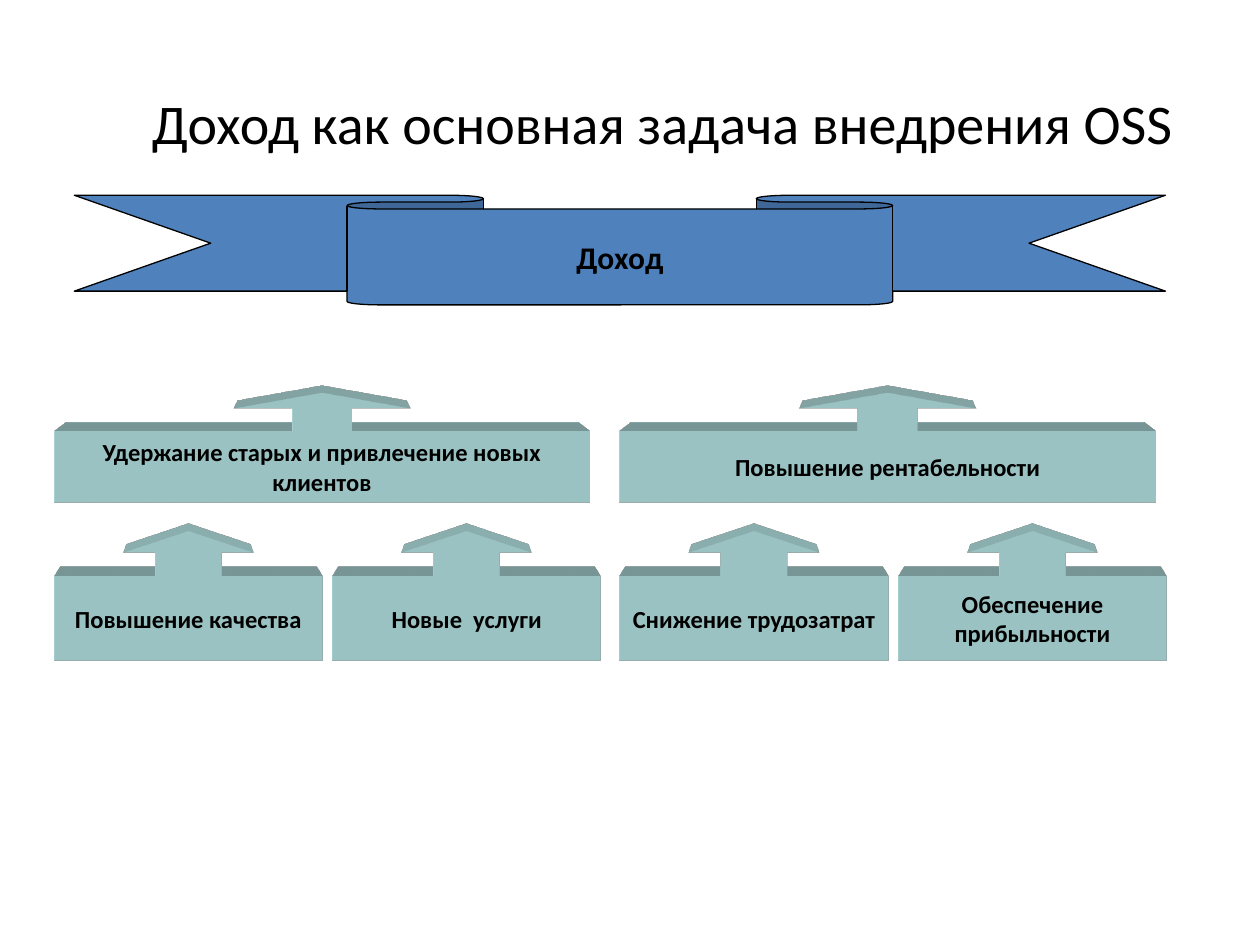
from lxml import etree
from pptx import Presentation
from pptx.dml.color import RGBColor
from pptx.enum import shapes, text
from pptx.oxml import ns
from pptx.util import Inches, Pt

COLORS = {"text": "000000", "ribbon": "4F81BD", "callout": "CCFFFF"}
FONT = "Calibri"

GROUP_LEFTS = (0.43, 4.92)
PART_STEP = 2.21
GROUPS = [
    ("Удержание старых и привлечение новых клиентов",
     ("Повышение качества", "Новые  услуги")),
    ("Повышение рентабельности",
     ("Снижение трудозатрат", "Обеспечение прибыльности")),
]
GOAL = {"top": 3.12, "size": (4.25, 0.87), "adjust": (0.545, 0.807, 0.144, 0.653)}
PART = {"top": 4.22, "size": (2.13, 1.02), "adjust": (0.519, 0.506, 0.167, 0.653)}


def color(name):
    return RGBColor.from_string(COLORS[name])


def write(shape, words, size, bold=False, wrap=True):
    frame = shape.text_frame
    frame.word_wrap = wrap
    frame.vertical_anchor = text.MSO_ANCHOR.MIDDLE
    para = frame.paragraphs[0]
    para.alignment = text.PP_ALIGN.CENTER
    span = para.add_run()
    span.text = words
    span.font.name = FONT
    span.font.size = Pt(size)
    span.font.bold = bold
    span.font.color.rgb = color("text")


def add_box(page, kind, left, top, width, height, fill, adjust):
    box = page.shapes.add_shape(
        kind, Inches(left), Inches(top), Inches(width), Inches(height))
    box.shadow.inherit = False
    box.fill.solid()
    box.fill.fore_color.rgb = color(fill)
    for index, value in enumerate(adjust):
        box.adjustments[index] = value
    return box


def extrude(box):
    """Give the shape depth, seen in perspective from above."""
    properties = box.fill._xPr

    def add(parent, tag, **attributes):
        return etree.SubElement(parent, ns.qn("a:" + tag), attributes)

    scene = add(properties, "scene3d")
    add(scene, "camera", prst="legacyPerspectiveTop")
    add(scene, "lightRig", rig="legacyFlat3", dir="b")
    solid = add(properties, "sp3d", extrusionH="430200", prstMaterial="legacyMatte")
    for bevel in ("bevelT", "bevelB"):
        add(solid, bevel, w="13500", h="13500", prst="angle")
    add(add(solid, "extrusionClr"), "srgbClr", val=COLORS["callout"])


def add_callout(page, words, left, style):
    box = add_box(page, shapes.MSO_SHAPE.UP_ARROW_CALLOUT, left, style["top"],
                  *style["size"], "callout", style["adjust"])
    box.line.fill.background()
    extrude(box)
    write(box, words, 14, bold=True)


def add_ribbon(page, words):
    ribbon = add_box(page, shapes.MSO_SHAPE.DOWN_RIBBON, 0.59, 1.55, 8.66, 0.87,
                     "ribbon", (0.125, 0.5))
    ribbon.line.color.rgb = color("text")
    ribbon.line.width = Pt(0.75)
    write(ribbon, words, 18, bold=True, wrap=False)


def add_title(page, words):
    title = page.shapes.title
    title.left, title.top = Inches(0.52), Inches(0.21)
    title.width, title.height = Inches(9.48), Inches(1.52)
    write(title, words, 32)


def main():
    deck = Presentation()
    deck.slide_width, deck.slide_height = Inches(10), Inches(7.5)
    page = deck.slides.add_slide(deck.slide_layouts[5])

    add_title(page, "Доход как основная задача внедрения OSS")
    add_ribbon(page, "Доход")

    # Each goal stands above the two parts that lead to it
    for left, (goal, parts) in zip(GROUP_LEFTS, GROUPS):
        add_callout(page, goal, left, GOAL)
        for column, part in enumerate(parts):
            add_callout(page, part, left + column * PART_STEP, PART)

    deck.save("out.pptx")


if __name__ == "__main__":
    main()
